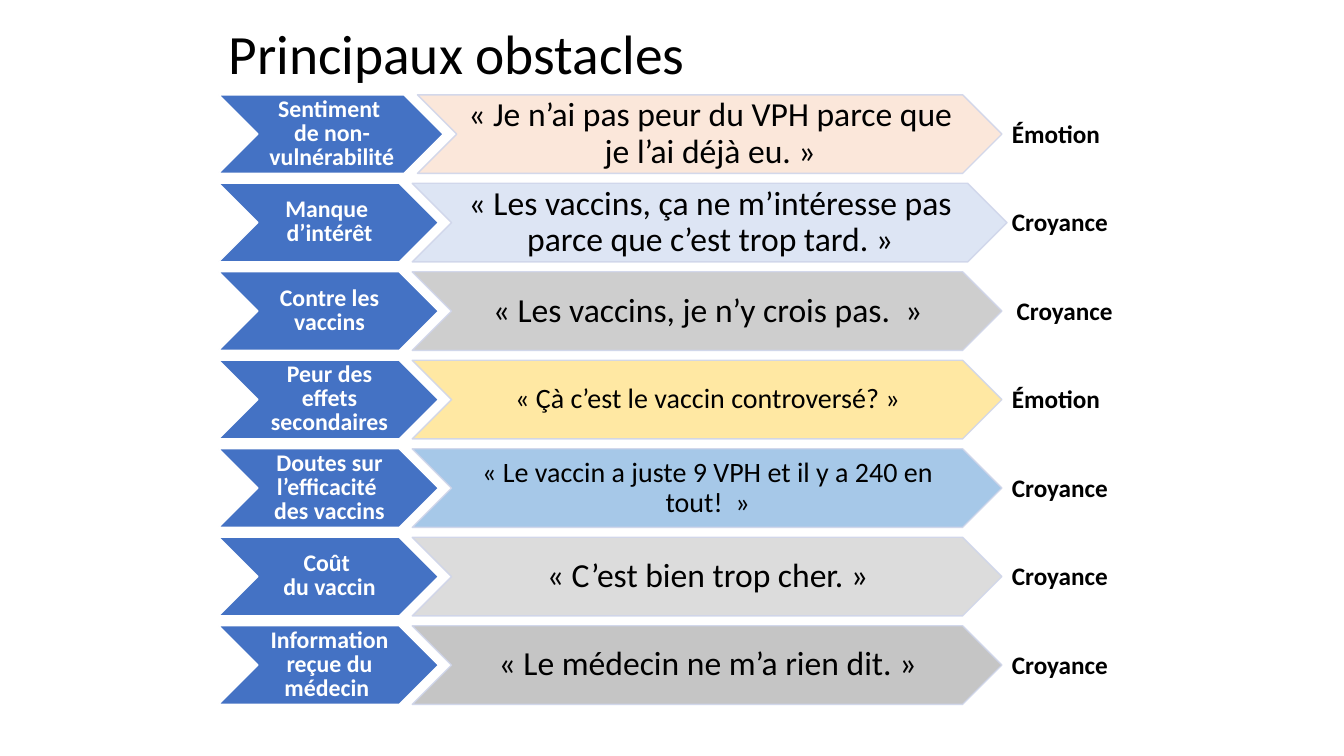
from lxml import etree
from pptx import Presentation
from pptx.dml.color import RGBColor
from pptx.enum.shapes import MSO_SHAPE
from pptx.enum.text import MSO_ANCHOR, PP_ALIGN
from pptx.oxml.ns import qn
from pptx.util import Cm, Pt

CHEVRON = MSO_SHAPE.CHEVRON
MIDDLE, TOP = MSO_ANCHOR.MIDDLE, MSO_ANCHOR.TOP
LEFT, CENTER = PP_ALIGN.LEFT, PP_ALIGN.CENTER

FONT = "Calibri"
BLACK, WHITE, BLUE, EDGE = "000000", "FFFFFF", "4472C4", "CFD5EA"
TITLE = "Principaux obstacles"

ROWS = [
    ("Sentiment \nde non-vulnérabilité", 5.66,
     "« Je n’ai pas peur du VPH parce que je l’ai déjà eu. »",
     24, 10.52, 14.73, "FBE5D6", "Émotion", 25.25),
    ("Manque \nd’intérêt", 5.54,
     "« Les vaccins, ça ne m’intéresse pas parce que c’est trop tard. »",
     24, 10.39, 14.99, "DAE3F3", "Croyance", 25.25),
    ("Contre les vaccins", 5.54,
     "« Les vaccins, je n’y crois pas.  »",
     24, 10.39, 14.86, "C9C9C9", "Croyance", 25.37),
    ("Peur des effets secondaires", 5.54,
     "« Çà c’est le vaccin controversé? »",
     20, 10.39, 14.86, "FFE699", "Émotion", 25.25),
    ("Doutes sur l’efficacité \ndes vaccins", 5.54,
     "« Le vaccin a juste 9 VPH et il y a 240 en tout!  »",
     20, 10.39, 14.86, "9DC3E6", "Croyance", 25.25),
    ("Coût \ndu vaccin", 5.54,
     "« C’est bien trop cher. »",
     24, 10.39, 14.86, "D9D9D9", "Croyance", 25.25),
    ("Information reçue du médecin ", 5.54,
     "« Le médecin ne m’a rien dit. »",
     24, 10.39, 14.86, "BFBFBF", "Croyance", 25.25),
]
ROW_TOP, TAG_TOP, PITCH, ROW_H = 2.39, 2.84, 2.23, 1.98
LABEL_LEFT = 5.51


def rgb(value):
    return RGBColor.from_string(value)


def write(sp, text, size, color, bold=False, align=LEFT, anchor=TOP,
          spacing=None, insets=(0.25, 0.13, 0.25, 0.13)):
    tf = sp.text_frame
    tf.word_wrap = True
    tf.vertical_anchor = anchor
    tf.margin_left, tf.margin_top, tf.margin_right, tf.margin_bottom = map(Cm, insets)
    p = tf.paragraphs[0]
    p.alignment = align
    p.line_spacing = spacing
    for i, line in enumerate(text.split("\n")):
        if i:
            p.add_line_break()
        r = p.add_run()
        r.text = line
        r.font.name, r.font.size, r.font.bold = FONT, Pt(size), bold
        r.font.color.rgb = rgb(color)


def text_box(s, left, top, width, height, *args, **kwargs):
    sp = s.shapes.add_textbox(Cm(left), Cm(top), Cm(width), Cm(height))
    write(sp, *args, **kwargs)


def chevron(s, left, top, width, fill, line, opacity=100):
    sp = s.shapes.add_shape(CHEVRON, Cm(left), Cm(top), Cm(width), Cm(ROW_H))
    sp.shadow.inherit = False
    sp.fill.solid()
    sp.fill.fore_color.rgb = rgb(fill)
    sp.line.color.rgb = rgb(line)
    sp.line.width = Pt(1)
    if opacity < 100:
        for clr in sp.element.spPr.iter(qn("a:srgbClr")):
            etree.SubElement(clr, qn("a:alpha")).set("val", str(opacity * 1000))
    return sp


def main():
    """Build the slide of obstacles, quotes and their nature."""
    prs = Presentation()
    prs.slide_width, prs.slide_height = Cm(33.87), Cm(19.05)
    s = prs.slides.add_slide(prs.slide_layouts[6])
    text_box(s, 5.51, 0.53, 23.37, 1.8, TITLE, 39.6, BLACK,
             anchor=MIDDLE, spacing=0.9)
    for i, (label, label_w, quote, size, left, width, fill, tag, tag_left) in enumerate(ROWS):
        top = ROW_TOP + i * PITCH
        sp = chevron(s, LABEL_LEFT, top, label_w, BLUE, WHITE)
        write(sp, label, 17, WHITE, True, CENTER, MIDDLE, Pt(17), (0.05, 0.03, 0, 0.03))
        sp = chevron(s, left, top, width, fill, EDGE, 90)
        write(sp, quote, size, BLACK, False, CENTER, MIDDLE, 0.9, (0.03, 0.05, 0, 0.05))
        text_box(s, tag_left, TAG_TOP + i * PITCH, 2.97, 1.02, tag, 18, BLACK, True)
    prs.save("out.pptx")


if __name__ == "__main__":
    main()
